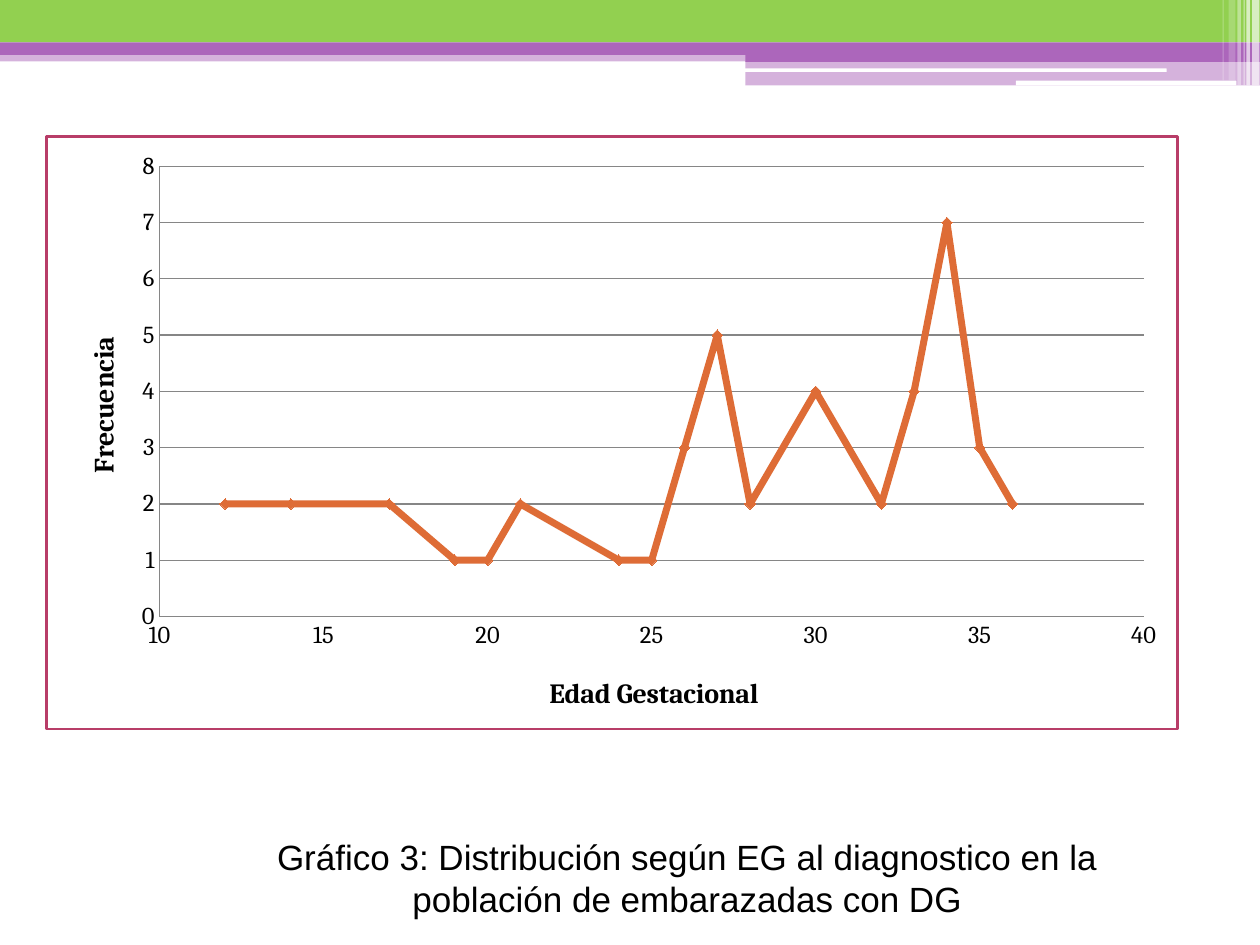
from lxml import etree
from pptx import Presentation
from pptx.chart.data import XyChartData
from pptx.dml.color import RGBColor
from pptx.enum import chart as ch, shapes as sh, text as tx
from pptx.oxml import parse_xml
from pptx.oxml.ns import nsdecls, qn
from pptx.util import Pt

GREEN = RGBColor(0x92, 0xD0, 0x50)
PURPLE = RGBColor(0xAC, 0x66, 0xBB)
WHITE = RGBColor(0xFF, 0xFF, 0xFF)
BLACK = RGBColor(0, 0, 0)
ORANGE = RGBColor(0xDE, 0x6C, 0x36)
PINK = RGBColor(0xB8, 0x3D, 0x68)
GRAY = RGBColor(0x86, 0x86, 0x86)

RECT = sh.MSO_SHAPE.RECTANGLE
ROUND = sh.MSO_SHAPE.ROUNDED_RECTANGLE

# left, top, width, height, colour, opacity in percent
BANDS = [
    (0, 28.8, 720, 6.3, PURPLE, 50),
    (0, 0, 720, 24.2, GREEN, 100),
    (0, 24.2, 720, 7.2, PURPLE, 100),
    (426, 28.3, 294, 7.1, PURPLE, 100),
    (426, 35.1, 294, 13.7, PURPLE, 50),
]
SLITS = [(425.5, 39.1, 241.2, 2), (580.5, 46.1, 126, 2.7)]
# left, width, height, opacity in percent
STRIPES = [
    (715.5, 4.2, 48.8, 65), (712.2, 2, 48.8, 65), (710.6, 0.7, 48.8, 60),
    (707.1, 2, 48.8, 40), (702, 4, 46, 20), (698.6, 0.7, 46, 30),
]
POINTS = [
    (12, 2), (14, 2), (17, 2), (19, 1), (20, 1), (21, 2), (24, 1), (25, 1),
    (26, 3), (27, 5), (28, 2), (30, 4), (32, 2), (33, 4), (34, 7), (35, 3),
    (36, 2),
]
CAPTION = ("Gráfico 3: Distribución según EG al diagnostico en la "
           "población de embarazadas con DG")


def add_bar(slide, kind, left, top, width, height, color, alpha=100):
    bar = slide.shapes.add_shape(kind, Pt(left), Pt(top), Pt(width), Pt(height))
    bar.shadow.inherit = False
    bar.fill.solid()
    bar.fill.fore_color.rgb = color
    bar.line.fill.background()
    if alpha < 100:
        tint = bar.fill._xPr.find(".//" + qn("a:srgbClr"))
        etree.SubElement(tint, qn("a:alpha"), val=str(alpha * 1000))


def set_font(font, size, name, bold=False):
    font.size, font.name, font.bold = Pt(size), name, bold
    font.color.rgb = BLACK


def place(node, after, inner=False, **box):
    """Give a chart part a fixed place, in fractions of the chart."""
    for old in node.findall(qn("c:layout")):
        node.remove(old)
    parts = '<c:layoutTarget val="inner"/>' if inner else ""
    parts += "".join(f'<c:{k}Mode val="edge"/>' for k in "xy")
    parts += "".join(f'<c:{k} val="{v}"/>' for k, v in box.items())
    layout = parse_xml(f'<c:layout {nsdecls("c")}><c:manualLayout>{parts}'
                       "</c:manualLayout></c:layout>")
    node.insert(0 if after is None else node.index(after) + 1, layout)


def style_axis(axis, name, low, high, step, x, y):
    axis.minimum_scale, axis.maximum_scale, axis.major_unit = low, high, step
    axis.major_tick_mark = axis.minor_tick_mark = ch.XL_TICK_MARK.NONE
    axis.format.line.color.rgb = GRAY
    axis.format.line.width = Pt(0.75)
    set_font(axis.tick_labels.font, 14, "Cambria")
    axis.tick_labels.number_format = "General"
    axis.tick_labels.number_format_is_linked = False
    para = axis.axis_title.text_frame.paragraphs[0]
    para.text = name
    set_font(para.font, 16, "Cambria", True)
    title = axis.axis_title._element
    place(title, title.find(qn("c:tx")), x=x, y=y)


def add_graph(slide):
    data = XyChartData()
    series = data.add_series("Series 1")
    for x, y in POINTS:
        series.add_data_point(x, y)
    chart = slide.shapes.add_chart(
        ch.XL_CHART_TYPE.XY_SCATTER_LINES, Pt(25.8), Pt(77.4), Pt(648),
        Pt(340), data).chart
    chart.has_legend = chart.has_title = False
    set_font(chart.font, 10, "Cambria")

    # Axes
    style_axis(chart.category_axis, "Edad Gestacional", 10, 40, 5, 0.44, 0.9)
    style_axis(chart.value_axis, "Frecuencia", 0, 8, 1, 0.03, 0.33)
    chart.category_axis.has_major_gridlines = False
    grid = chart.value_axis.major_gridlines.format.line
    grid.color.rgb, grid.width = GRAY, Pt(0.75)

    # Curve
    plot = chart.plots[0]
    plot.vary_by_categories = False
    curve = plot.series[0]
    curve.smooth = False
    curve.format.line.color.rgb = ORANGE
    curve.format.line.width = Pt(4)
    mark = curve.marker
    mark.style, mark.size = ch.XL_MARKER_STYLE.DIAMOND, 6
    mark.format.fill.solid()
    mark.format.fill.fore_color.rgb = ORANGE
    mark.format.line.color.rgb = ORANGE

    # Plot area and frame
    root = chart._chartSpace
    area = root.find(".//" + qn("c:plotArea"))
    place(area, None, True, x=0.1, y=0.05, w=0.87, h=0.76)
    root.find(qn("c:chart")).addnext(parse_xml(
        f'<c:spPr {nsdecls("c", "a")}>'
        f'<a:solidFill><a:srgbClr val="{WHITE}"/></a:solidFill>'
        f'<a:ln w="{Pt(1.5)}"><a:solidFill><a:srgbClr val="{PINK}"/>'
        "</a:solidFill></a:ln></c:spPr>"))


def add_caption(slide):
    box = slide.shapes.add_textbox(Pt(147.6), Pt(473.8), Pt(490.3), Pt(55.4))
    frame = box.text_frame
    frame.word_wrap = True
    frame.vertical_anchor = tx.MSO_ANCHOR.MIDDLE
    frame.auto_size = tx.MSO_AUTO_SIZE.SHAPE_TO_FIT_TEXT
    para = frame.paragraphs[0]
    para.text = CAPTION
    para.alignment = tx.PP_ALIGN.CENTER
    set_font(para.font, 20, "Arial")


def main():
    deck = Presentation()
    deck.slide_width, deck.slide_height = Pt(720), Pt(540)
    slide = deck.slides.add_slide(deck.slide_layouts[6])

    # Header decoration
    for band in BANDS:
        add_bar(slide, RECT, *band)
    for slit in SLITS:
        add_bar(slide, ROUND, *slit, WHITE)
    for left, width, height, alpha in STRIPES:
        add_bar(slide, RECT, left, 0, width, height, WHITE, alpha)

    add_graph(slide)
    add_caption(slide)
    deck.save("out.pptx")


if __name__ == "__main__":
    main()
